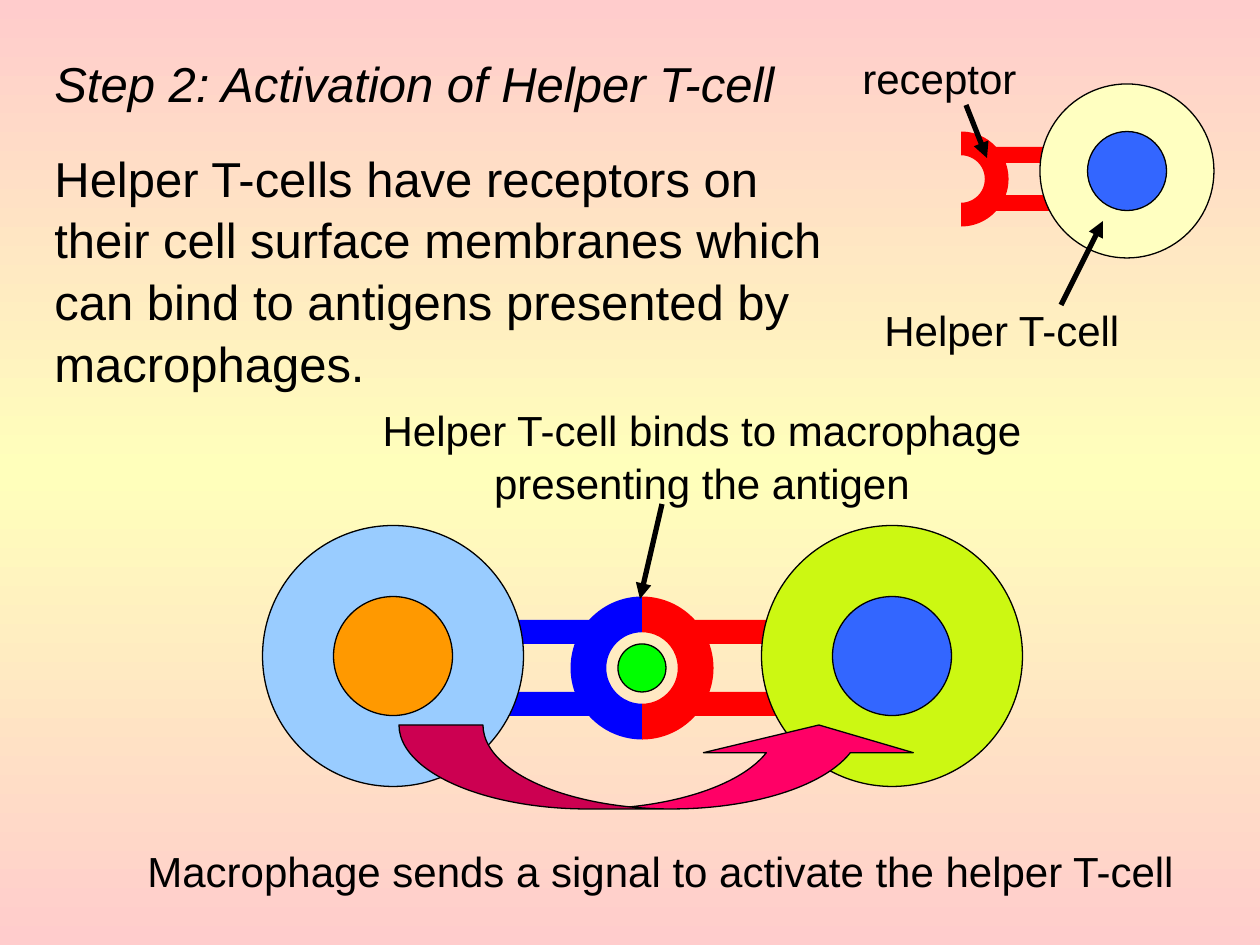
import copy

import pptx
import pptx.dml.color
import pptx.enum.shapes
import pptx.enum.text
import pptx.oxml
import pptx.oxml.ns
import pptx.util

PX = pptx.util.Inches(1) / 126
SHAPE = pptx.enum.shapes.MSO_SHAPE
ALIGN = pptx.enum.text.PP_ALIGN
BLACK, RED, BLUE, NUCLEUS = "000000", "FF0000", "0000FF", "3366FF"

BACKGROUND = [(0, "FFCCCC"), (0.5, "FFFFBB"), (1, "FFCCCC")]

# center x, center y, diameter, facing angle, colour
RECEPTORS = [
    (642, 668, 143, 270, BLUE),
    (642, 668, 143, 90, RED),
    (961, 179, 95, 90, RED),
]
# left, center y, length, thickness, distance between the two stalks, colour
STALKS = [
    (477, 668, 118, 24, 72, BLUE),
    (690, 668, 118, 24, 72, RED),
    (993, 179, 79, 16, 48, RED),
]
# center x, center y, diameter, nucleus diameter, cell colour, nucleus colour
CELLS = [
    (393, 656, 261, 119, "99CCFF", "FF9900"),
    (892, 656, 261, 119, "CCF812", NUCLEUS),
    (1127, 171, 174, 79, "FFFFC1", NUCLEUS),
]
ANTIGEN = (642, 668, 48, "00FF00")
SIGNAL = (399, 725, 525, 84, "FF0066")

POINTERS = [
    ((662, 504), (640, 599)),
    ((966, 105), (987, 158)),
    ((1061, 305), (1103, 221)),
]
# text, left, top, width, height, size, italic, alignment
TEXTS = [
    ("Step 2: Activation of Helper T-cell", 42, 44, 945, 72, 28, True, ALIGN.LEFT),
    ("Helper T-cells have receptors on their cell surface membranes which can bind "
     "to antigens presented by macrophages.", 42, 139, 798, 248, 28, False, ALIGN.LEFT),
    ("receptor", 850, 44, 180, 63, 24, False, ALIGN.LEFT),
    ("Helper T-cell", 872, 296, 263, 63, 24, False, ALIGN.LEFT),
    ("Helper T-cell binds to macrophage presenting the antigen",
     365, 396, 674, 113, 24, False, ALIGN.CENTER),
    ("Macrophage sends a signal to activate the helper T-cell",
     135, 837, 1056, 63, 24, False, ALIGN.LEFT),
]


def px(*lengths):
    return [round(length * PX) for length in lengths]


def rgb(color):
    return pptx.dml.color.RGBColor.from_string(color)


def paint_background(slide):
    fill = slide.background.fill
    fill.gradient()
    fill.gradient_angle = 270
    stop_list = slide.element.find(".//" + pptx.oxml.ns.qn("a:gsLst"))
    stop_list.insert(1, copy.deepcopy(stop_list[0]))
    for stop, (position, color) in zip(fill.gradient_stops, BACKGROUND):
        stop.position = position
        stop.color.rgb = rgb(color)


def add_shape(slide, kind, box, color, outlined=False):
    shape = slide.shapes.add_shape(kind, *px(*box))
    shape.shadow.inherit = False
    shape.fill.solid()
    shape.fill.fore_color.rgb = rgb(color)
    if outlined:
        shape.line.color.rgb = rgb(BLACK)
        shape.line.width = pptx.util.Pt(0.75)
    else:
        shape.line.fill.background()
    return shape


def square(x, y, size):
    """Box of a square around a center point."""
    return x - size / 2, y - size / 2, size, size


def add_pointer(slide, start, end):
    line = slide.shapes.add_connector(
        pptx.enum.shapes.MSO_CONNECTOR.STRAIGHT, *px(*start, *end))
    line.line.color.rgb = rgb(BLACK)
    line.line.width = pptx.util.Pt(3)
    head = pptx.oxml.parse_xml(
        f'<a:tailEnd {pptx.oxml.ns.nsdecls("a")} type="triangle"/>')
    line.line._get_or_add_ln().append(head)
    line.element.spPr.append(
        pptx.oxml.parse_xml(f'<a:effectLst {pptx.oxml.ns.nsdecls("a")}/>'))


def add_text(slide, text, left, top, width, height, size, italic, alignment):
    frame = slide.shapes.add_textbox(*px(left, top, width, height)).text_frame
    frame.word_wrap = True
    paragraph = frame.paragraphs[0]
    paragraph.text = text
    paragraph.alignment = alignment
    paragraph.line_spacing = 1.05
    paragraph.font.name = "Arial"
    paragraph.font.size = pptx.util.Pt(size)
    paragraph.font.italic = italic
    paragraph.font.color.rgb = rgb(BLACK)


def main():
    presentation = pptx.Presentation()
    presentation.slide_width, presentation.slide_height = px(1260, 945)
    slide = presentation.slides.add_slide(presentation.slide_layouts[6])
    paint_background(slide)

    for x, y, size, angle, color in RECEPTORS:
        receptor = add_shape(slide, SHAPE.BLOCK_ARC, square(x, y, size), color)
        receptor.rotation = angle
    for left, y, length, thickness, distance, color in STALKS:
        for center in (y - distance / 2, y + distance / 2):
            box = (left, center - thickness / 2, length, thickness)
            add_shape(slide, SHAPE.RECTANGLE, box, color)
    for x, y, size, nucleus_size, color, nucleus_color in CELLS:
        add_shape(slide, SHAPE.OVAL, square(x, y, size), color, True)
        add_shape(slide, SHAPE.OVAL, square(x, y, nucleus_size), nucleus_color, True)
    x, y, size, color = ANTIGEN
    add_shape(slide, SHAPE.OVAL, square(x, y, size), color, True)

    *box, color = SIGNAL
    signal = add_shape(slide, SHAPE.CURVED_UP_ARROW, box, color, True)
    for index, value in enumerate((1.25, 2.5, 0.33)):
        signal.adjustments[index] = value

    for start, end in POINTERS:
        add_pointer(slide, start, end)
    for text in TEXTS:
        add_text(slide, *text)

    presentation.save("out.pptx")


if __name__ == "__main__":
    main()
